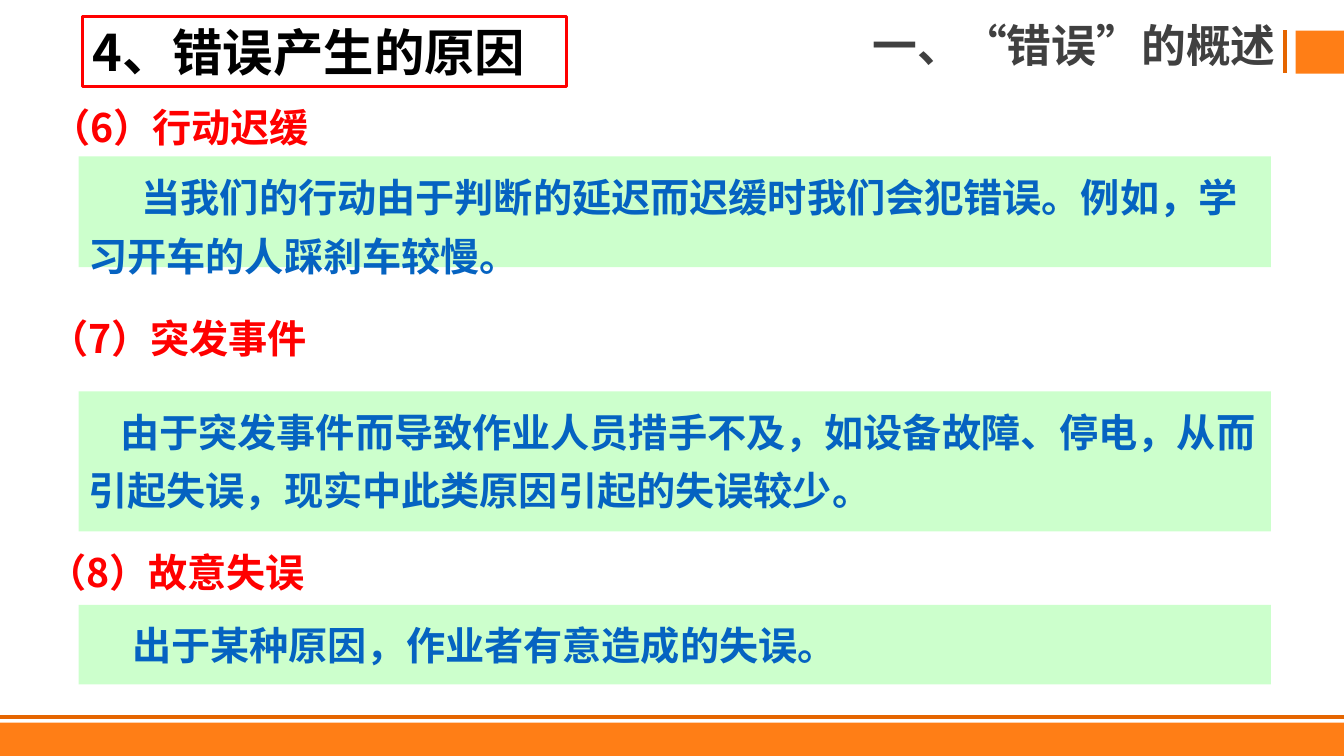
from dataclasses import dataclass

from lxml.etree import SubElement
from pptx import Presentation
from pptx.dml.color import RGBColor
from pptx.enum.shapes import MSO_CONNECTOR, MSO_SHAPE
from pptx.enum.text import MSO_ANCHOR, PP_ALIGN
from pptx.oxml.ns import qn
from pptx.util import Cm, Pt


@dataclass(frozen=True)
class Theme:
    """Colours, font and type sizes of the slide."""
    font: str = "Noto Sans CJK SC"
    orange: str = "FF7E16"
    rule: str = "E56500"
    red: str = "FF0000"
    green: str = "CCFFCC"
    blue: str = "0563C1"
    grey: str = "404040"
    black: str = "000000"
    topic_size: int = 36
    chapter_size: int = 32
    body_size: int = 28


class SlideBuilder:
    """Draws styled elements on one slide."""

    def __init__(self, slide, theme):
        self.slide = slide
        self.theme = theme

    def add_text(self, frame, text, size, color, align=PP_ALIGN.LEFT,
                 anchor=MSO_ANCHOR.TOP, spacing=1.0, indent=0):
        """Fill a text frame with one bold paragraph."""
        frame.word_wrap = True
        frame.vertical_anchor = anchor
        paragraph = frame.paragraphs[0]
        paragraph.alignment = align
        paragraph.line_spacing = spacing
        if indent:
            paragraph._p.get_or_add_pPr().set("indent", str(Cm(indent)))
        run = paragraph.add_run()
        run.text = text
        run.font.size = Pt(size)
        run.font.bold = True
        run.font.name = self.theme.font
        run.font.color.rgb = RGBColor.from_string(color)
        east_asian = SubElement(run._r.get_or_add_rPr(), qn("a:ea"))
        east_asian.set("typeface", self.theme.font)

    def box(self, left, top, width, height, fill=None, outline=None):
        """Add a flat rectangle and return it."""
        rectangle = self.slide.shapes.add_shape(
            MSO_SHAPE.RECTANGLE, Cm(left), Cm(top), Cm(width), Cm(height))
        rectangle.shadow.inherit = False
        if fill:
            rectangle.fill.solid()
            rectangle.fill.fore_color.rgb = RGBColor.from_string(fill)
        else:
            rectangle.fill.background()
        if outline:
            rectangle.line.color.rgb = RGBColor.from_string(outline)
            rectangle.line.width = Pt(2)
        else:
            rectangle.line.fill.background()
        return rectangle

    def rule(self, x1, y1, x2, y2):
        """Add a straight accent line."""
        accent = self.slide.shapes.add_connector(
            MSO_CONNECTOR.STRAIGHT, Cm(x1), Cm(y1), Cm(x2), Cm(y2))
        accent.line.color.rgb = RGBColor.from_string(self.theme.rule)
        accent.line.width = Pt(3)
        SubElement(accent._element.spPr, qn("a:effectLst"))

    def label(self, left, top, width, height, text, size, color, **layout):
        """Add a text box with one paragraph."""
        caption = self.slide.shapes.add_textbox(
            Cm(left), Cm(top), Cm(width), Cm(height))
        self.add_text(caption.text_frame, text, size, color, **layout)

    def panel(self, top, height, text, indent):
        """Add a green explanation panel."""
        explanation = self.box(1.98, top, 30.05, height, fill=self.theme.green)
        self.add_text(explanation.text_frame, text, self.theme.body_size,
                      self.theme.blue, spacing=1.25, indent=indent)


CAUSES = [
    ((1.04, 2.49), "（6）行动迟缓", (3.94, 2.79), 1.34,
     "当我们的行动由于判断的延迟而迟缓时我们会犯错误。例如，学习开车的人踩刹车较慢。"),
    ((0.99, 7.8), "（7）突发事件", (9.86, 3.53), 0.8,
     "由于突发事件而导致作业人员措手不及，如设备故障、停电，从而引起失误，现实中此类原因引起的失误较少。"),
    ((0.94, 13.69), "（8）故意失误", (15.24, 2.01), 1.1,
     "出于某种原因，作业者有意造成的失误。"),
]


def main():
    """Build and save the slide."""
    deck = Presentation()
    deck.slide_width, deck.slide_height = Cm(33.87), Cm(19.05)
    theme = Theme()
    builder = SlideBuilder(deck.slides.add_slide(deck.slide_layouts[6]), theme)

    builder.box(0, 18.21, 33.87, 0.84, fill=theme.orange)
    builder.rule(0, 18.06, 33.87, 18.06)
    builder.box(32.65, 0.77, 1.22, 1.09, fill=theme.orange)
    builder.rule(32.39, 0.76, 32.39, 1.85)

    builder.label(14.86, 0.66, 17.55, 1.09, "一、“错误”的概述", theme.chapter_size,
                  theme.grey, align=PP_ALIGN.RIGHT, anchor=MSO_ANCHOR.MIDDLE,
                  spacing=0.9)
    topic = builder.box(2.08, 0.41, 12.19, 1.78, outline=theme.red)
    builder.add_text(topic.text_frame, "4、错误产生的原因", theme.topic_size, theme.black)

    for (left, top), heading, (panel_top, height), indent, text in CAUSES:
        builder.panel(panel_top, height, text, indent)
        builder.label(left, top, 17, 1.45, heading, theme.body_size, theme.red)

    deck.save("out.pptx")


if __name__ == "__main__":
    main()
